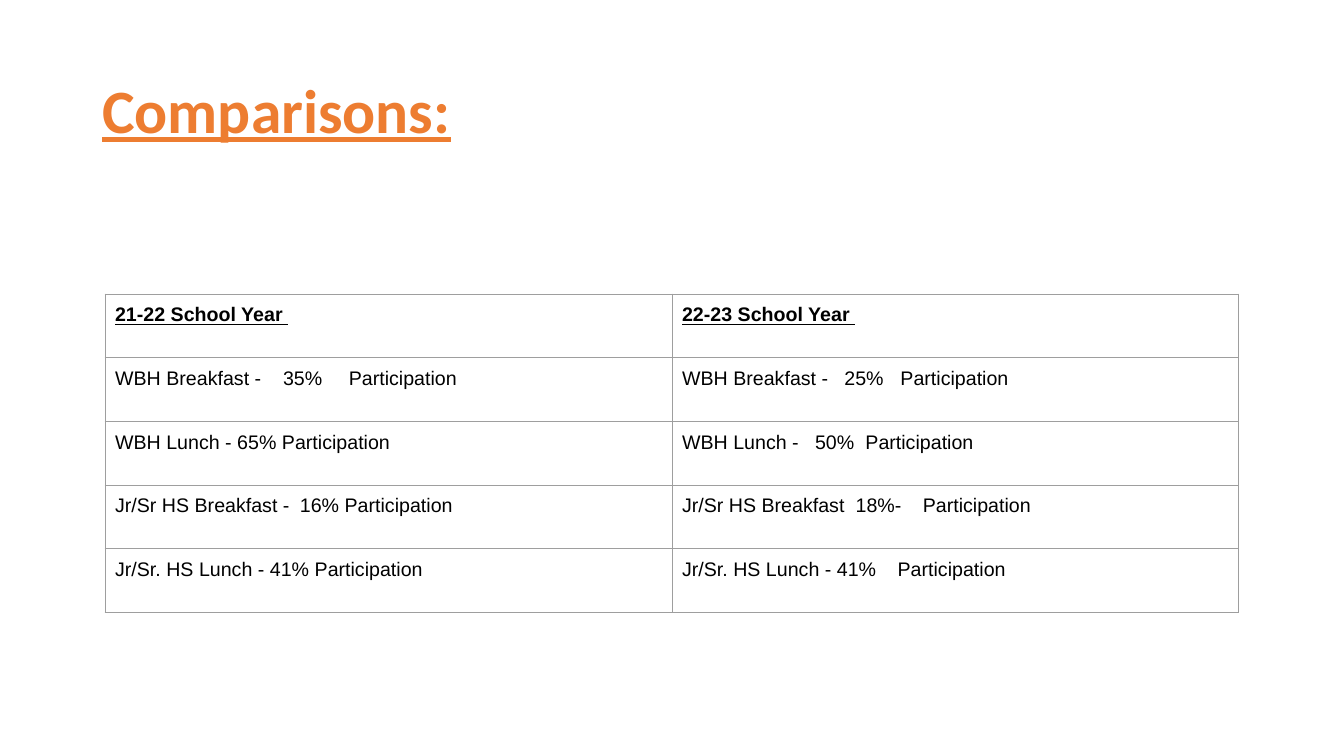
"""Build a slide comparing meal participation across two school years."""
from lxml import etree
from pptx import Presentation
from pptx.dml.color import RGBColor
from pptx.enum.text import MSO_ANCHOR
from pptx.oxml.ns import qn
from pptx.util import Pt

MIDDLE = MSO_ANCHOR.MIDDLE
BORDER_COLOR = "9E9E9E"
ROW_HEIGHT = 45.5
COLUMN_WIDTH = 405

HEADINGS = ["21-22 School Year ", "22-23 School Year "]
ROWS = [
    [("WBH Breakfast -\t35%\tParticipation", [120, 167]),
     ("WBH Breakfast -\t25%\tParticipation", [116, 156])],
    [("WBH Lunch - 65% Participation", []),
     ("WBH Lunch -\t50%\tParticipation", [95, 131])],
    [("Jr/Sr HS Breakfast -\t16% Participation", [132]),
     ("Jr/Sr HS Breakfast\t18%-\tParticipation", [124, 172])],
    [("Jr/Sr. HS Lunch - 41% Participation", []),
     ("Jr/Sr. HS Lunch - 41%\tParticipation", [154])],
]


def style_font(paragraph, name, size, color, emphasis):
    font = paragraph.font
    font.name = name
    font.size = Pt(size)
    font.bold = emphasis
    font.underline = emphasis
    font.color.rgb = RGBColor.from_string(color)


def add_borders(cell):
    properties = cell._tc.get_or_add_tcPr()
    for position, side in enumerate(("lnL", "lnR", "lnT", "lnB")):
        line = etree.Element(qn(f"a:{side}"), w=str(Pt(0.75)))
        fill = etree.SubElement(line, qn("a:solidFill"))
        etree.SubElement(fill, qn("a:srgbClr"), val=BORDER_COLOR)
        properties.insert(position, line)


presentation = Presentation()
presentation.slide_width = Pt(960)
presentation.slide_height = Pt(540)
slide = presentation.slides.add_slide(presentation.slide_layouts[6])

title = slide.shapes.add_textbox(Pt(66), Pt(28.8), Pt(828), Pt(104.4))
title_frame = title.text_frame
title_frame.word_wrap = True
title_frame.vertical_anchor = MIDDLE
title_paragraph = title_frame.paragraphs[0]
title_paragraph.text = "Comparisons:"
title_paragraph.line_spacing = 0.9
style_font(title_paragraph, "Calibri", 44, "ED7D31", True)

table_rows = [[(heading, []) for heading in HEADINGS]] + ROWS
table = slide.shapes.add_table(
    len(table_rows), len(HEADINGS), Pt(75), Pt(210),
    Pt(COLUMN_WIDTH * len(HEADINGS)), Pt(ROW_HEIGHT * len(table_rows))).table
table.first_row = False
table.horz_banding = False
for column in table.columns:
    column.width = Pt(COLUMN_WIDTH)

for row_index, row_entries in enumerate(table_rows):
    table.rows[row_index].height = Pt(ROW_HEIGHT)
    for column_index, (text, tab_stops) in enumerate(row_entries):
        cell = table.cell(row_index, column_index)
        cell.margin_left = cell.margin_right = Pt(7.2)
        cell.margin_top = cell.margin_bottom = Pt(7.2)
        cell.fill.background()
        add_borders(cell)
        paragraph = cell.text_frame.paragraphs[0]
        paragraph.text = text
        style_font(paragraph, "Arial", 14, "000000", row_index == 0)
        if tab_stops:
            tab_list = etree.Element(qn("a:tabLst"))
            for stop in tab_stops:
                etree.SubElement(tab_list, qn("a:tab"), pos=str(Pt(stop)), algn="l")
            paragraph._p.get_or_add_pPr().insert(0, tab_list)

presentation.save("out.pptx")
